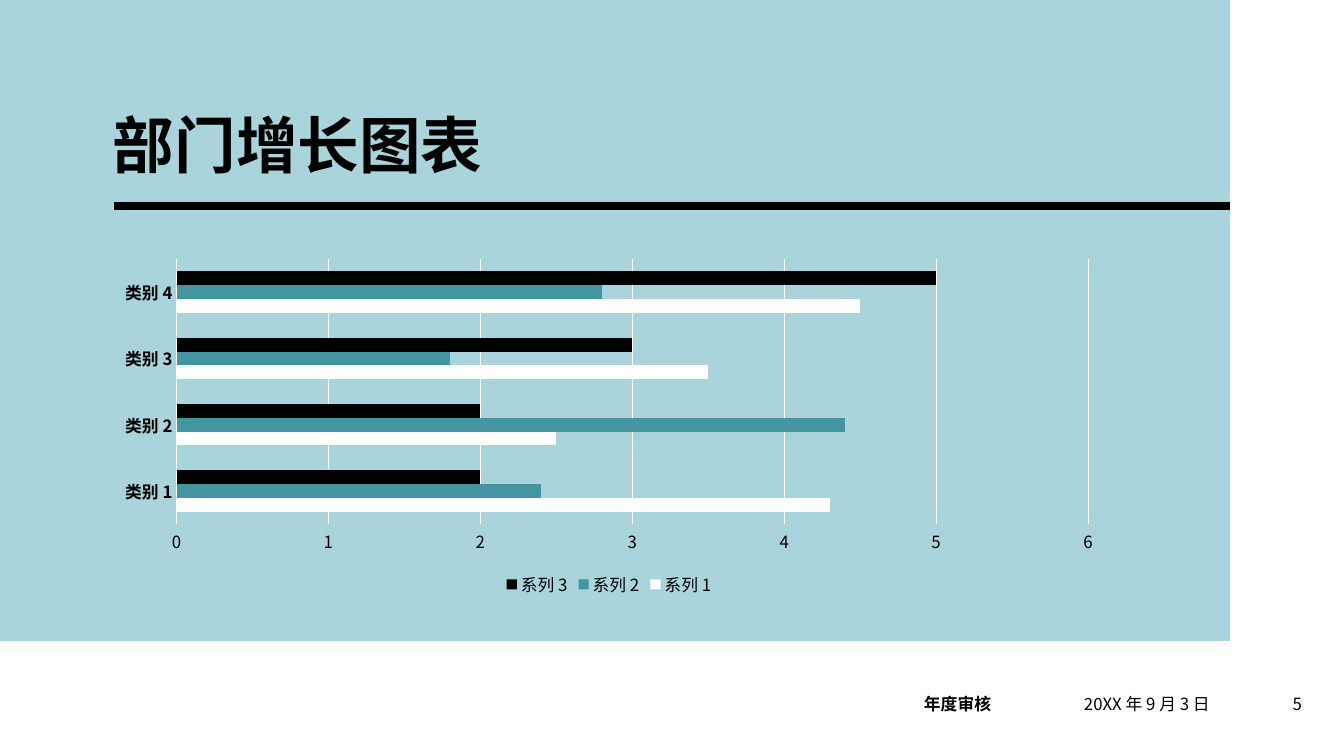
from dataclasses import dataclass

import pptx
import pptx.chart.data
import pptx.dml.color
import pptx.enum.chart
import pptx.enum.shapes
import pptx.enum.text
import pptx.oxml
import pptx.oxml.ns
import pptx.util

EMU_PER_PX = 914400 / 100.8
ALIGN = pptx.enum.text.PP_ALIGN
ANCHOR = pptx.enum.text.MSO_ANCHOR


def px(length):
    return pptx.util.Emu(round(length * EMU_PER_PX))


def rgb(color):
    return pptx.dml.color.RGBColor.from_string(color)


@dataclass(frozen=True)
class Theme:
    font: str = "Noto Sans CJK SC"
    ink: str = "000000"
    paper: str = "FFFFFF"
    panel: str = "A9D4DB"
    accent: str = "4495A2"
    title_size: int = 44
    body_size: int = 12
    rule_width: float = 6
    grid_width: float = 0.75


class SlideBuilder:
    def __init__(self, slide, theme):
        self.shapes = slide.shapes
        self.theme = theme

    def style_font(self, font, size, bold=False):
        """Set Latin and East Asian typeface, size, weight and ink colour."""
        font.name = self.theme.font
        font.size = pptx.util.Pt(size)
        font.bold = bold
        font.color.rgb = rgb(self.theme.ink)
        east_asian = pptx.oxml.parse_xml(
            f'<a:ea {pptx.oxml.ns.nsdecls("a")} typeface="{self.theme.font}"/>')
        font._element.find(pptx.oxml.ns.qn("a:latin")).addnext(east_asian)

    def panel(self, left, top, width, height):
        panel = self.shapes.add_shape(
            pptx.enum.shapes.MSO_SHAPE.RECTANGLE, *map(px, (left, top, width, height)))
        panel.shadow.inherit = False
        panel.fill.solid()
        panel.fill.fore_color.rgb = rgb(self.theme.panel)
        panel.line.fill.background()

    def rule(self, left, right, y):
        rule = self.shapes.add_connector(
            pptx.enum.shapes.MSO_CONNECTOR.STRAIGHT, px(left), px(y), px(right), px(y))
        rule.line.color.rgb = rgb(self.theme.ink)
        rule.line.width = pptx.util.Pt(self.theme.rule_width)
        rule._element.spPr.append(
            pptx.oxml.parse_xml(f'<a:effectLst {pptx.oxml.ns.nsdecls("a")}/>'))

    def text(self, words, left, top, width, height, size, bold=False, inset=0,
             align=ALIGN.LEFT, anchor=ANCHOR.MIDDLE, spacing=1.0):
        frame = self.shapes.add_textbox(*map(px, (left, top, width, height))).text_frame
        frame.word_wrap = True
        frame.vertical_anchor = anchor
        frame.margin_left = frame.margin_right = px(inset)
        frame.margin_top = frame.margin_bottom = 0
        frame.text = words
        paragraph = frame.paragraphs[0]
        paragraph.alignment = align
        paragraph.line_spacing = spacing
        self.style_font(paragraph.runs[0].font, size, bold)

    def bar_chart(self, categories, series, left, top, width, height):
        """Add clustered bars; series holds (name, values, colour) rows."""
        data = pptx.chart.data.CategoryChartData()
        data.categories = categories
        for name, values, _ in series:
            data.add_series(name, values)
        chart = self.shapes.add_chart(
            pptx.enum.chart.XL_CHART_TYPE.BAR_CLUSTERED,
            *map(px, (left, top, width, height)), data).chart
        size = self.theme.body_size
        self.style_font(chart.font, size)
        chart.has_title = False

        plot = chart.plots[0]
        plot.gap_width = 182
        plot.overlap = 0
        plot.vary_by_categories = False
        for bars, (_, _, color) in zip(plot.series, series):
            bars.format.fill.solid()
            bars.format.fill.fore_color.rgb = rgb(color)

        chart.has_legend = True
        chart.legend.position = pptx.enum.chart.XL_LEGEND_POSITION.BOTTOM
        chart.legend.include_in_layout = False
        self.style_font(chart.legend.font, size)

        category_axis, value_axis = chart.category_axis, chart.value_axis
        for axis in (category_axis, value_axis):
            axis.major_tick_mark = axis.minor_tick_mark = pptx.enum.chart.XL_TICK_MARK.NONE
            self.style_font(axis.tick_labels.font, size, bold=axis is category_axis)
        value_axis.minimum_scale, value_axis.maximum_scale = 0, 6
        value_axis.major_unit = 1
        value_axis.format.line.fill.background()
        value_axis.has_major_gridlines = True
        for line in (category_axis.format.line, value_axis.major_gridlines.format.line):
            line.color.rgb = rgb(self.theme.paper)
            line.width = pptx.util.Pt(self.theme.grid_width)


def main():
    theme = Theme()
    deck = pptx.Presentation()
    deck.slide_width, deck.slide_height = px(1344), px(756)
    builder = SlideBuilder(deck.slides.add_slide(deck.slide_layouts[6]), theme)

    builder.panel(0, -1, 1230, 642)
    builder.rule(114, 1230, 206)
    builder.text("部门增长图表", 113, 110, 861, 72, theme.title_size, bold=True,
                 anchor=ANCHOR.BOTTOM, spacing=0.9)

    growth = [
        ("系列 1", (4.3, 2.5, 3.5, 4.5), theme.paper),
        ("系列 2", (2.4, 4.4, 1.8, 2.8), theme.accent),
        ("系列 3", (2, 2, 3, 5), theme.ink),
    ]
    builder.bar_chart([f"类别 {number}" for number in range(1, 5)], growth,
                      105, 252, 1008, 349)

    footer = {"top": 694, "height": 20, "size": theme.body_size}
    builder.text("年度审核", left=914, width=161, bold=True, inset=10, **footer)
    builder.text("20XX 年 9 月 3 日", left=1084, width=168, **footer)
    builder.text("5", left=1267, width=45, inset=10, align=ALIGN.RIGHT, **footer)

    deck.save("out.pptx")


if __name__ == "__main__":
    main()
